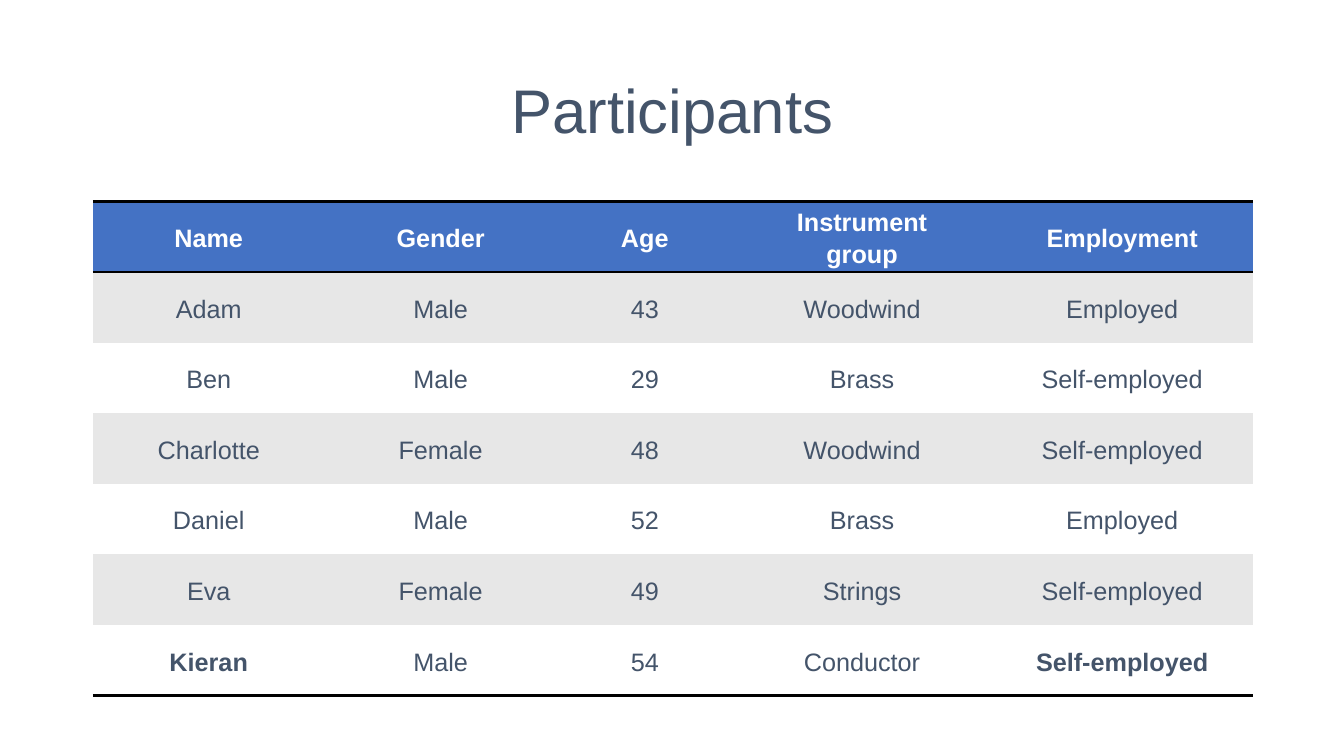
from lxml import etree
from pptx import Presentation
from pptx.dml.color import RGBColor
from pptx.enum.text import MSO_ANCHOR, PP_ALIGN
from pptx.oxml.ns import qn
from pptx.util import Inches, Pt

MIDDLE = MSO_ANCHOR.MIDDLE
CENTER = PP_ALIGN.CENTER
FONT = "Arial"
SLATE = RGBColor(0x44, 0x54, 0x6A)
BLUE = RGBColor(0x44, 0x72, 0xC4)
GRAY = RGBColor(0xE7, 0xE7, 0xE7)
WHITE = RGBColor(0xFF, 0xFF, 0xFF)
BLACK = RGBColor(0x00, 0x00, 0x00)

LEFT, WIDTH = 0.92, 11.5
ROW_HEIGHT = 0.7
COLUMN_WIDTHS = [2.3, 2.3, 1.75, 2.56, 2.6]
PARTICIPANTS = [
    ["Name", "Gender", "Age", "Instrument\ngroup", "Employment"],
    ["Adam", "Male", "43", "Woodwind", "Employed"],
    ["Ben", "Male", "29", "Brass", "Self-employed"],
    ["Charlotte", "Female", "48", "Woodwind", "Self-employed"],
    ["Daniel", "Male", "52", "Brass", "Employed"],
    ["Eva", "Female", "49", "Strings", "Self-employed"],
    ["Kieran", "Male", "54", "Conductor", "Self-employed"],
]
LAST_ROW = len(PARTICIPANTS) - 1
BOLD_CELLS = {(LAST_ROW, 0), (LAST_ROW, 4)}


def write_text(frame, text, size, color, bold, spacing):
    for index, line in enumerate(text.split("\n")):
        paragraph = frame.add_paragraph() if index else frame.paragraphs[0]
        paragraph.alignment = CENTER
        paragraph.line_spacing = spacing
        run = paragraph.add_run()
        run.text = line
        run.font.name = FONT
        run.font.size = Pt(size)
        run.font.bold = bold
        run.font.color.rgb = color


def set_borders(cell, ruled_sides):
    properties = cell._tc.get_or_add_tcPr()
    for side in ("lnL", "lnR", "lnT", "lnB"):
        border = etree.SubElement(properties, qn(f"a:{side}"))
        if side in ruled_sides:
            border.set("w", str(Pt(2)))
            fill = etree.SubElement(border, qn("a:solidFill"))
            etree.SubElement(fill, qn("a:srgbClr"), val=str(BLACK))
        else:
            etree.SubElement(border, qn("a:noFill"))


def add_title(slide, text):
    title = slide.shapes.add_textbox(Inches(LEFT), Inches(0.4), Inches(WIDTH), Inches(1.45))
    frame = title.text_frame
    frame.word_wrap = True
    frame.vertical_anchor = MIDDLE
    write_text(frame, text, 44, SLATE, False, 0.9)


def fill_cell(cell, text, row, column):
    is_header = row == 0
    ruled_sides = set()
    if row <= 1:
        ruled_sides.add("lnT")
    if row in (0, LAST_ROW):
        ruled_sides.add("lnB")
    set_borders(cell, ruled_sides)
    cell.fill.solid()
    cell.fill.fore_color.rgb = BLUE if is_header else GRAY if row % 2 else WHITE
    cell.vertical_anchor = MIDDLE
    cell.margin_left = cell.margin_right = Inches(0.07)
    cell.margin_top = cell.margin_bottom = 0
    bold = is_header or (row, column) in BOLD_CELLS
    write_text(cell.text_frame, text, 18, WHITE if is_header else SLATE, bold, 1.15)


def add_participant_table(slide):
    row_count = len(PARTICIPANTS)
    table = slide.shapes.add_table(
        row_count, len(COLUMN_WIDTHS), Inches(LEFT), Inches(2),
        Inches(WIDTH), Inches(ROW_HEIGHT * row_count),
    ).table
    table.horz_banding = False
    for column, width in zip(table.columns, COLUMN_WIDTHS):
        column.width = Inches(width)
    for row, values in enumerate(PARTICIPANTS):
        table.rows[row].height = Inches(ROW_HEIGHT)
        for column, text in enumerate(values):
            fill_cell(table.cell(row, column), text, row, column)


def main():
    presentation = Presentation()
    presentation.slide_width = Inches(13.33)
    presentation.slide_height = Inches(7.5)
    slide = presentation.slides.add_slide(presentation.slide_layouts[6])
    add_title(slide, "Participants")
    add_participant_table(slide)
    presentation.save("out.pptx")


if __name__ == "__main__":
    main()
